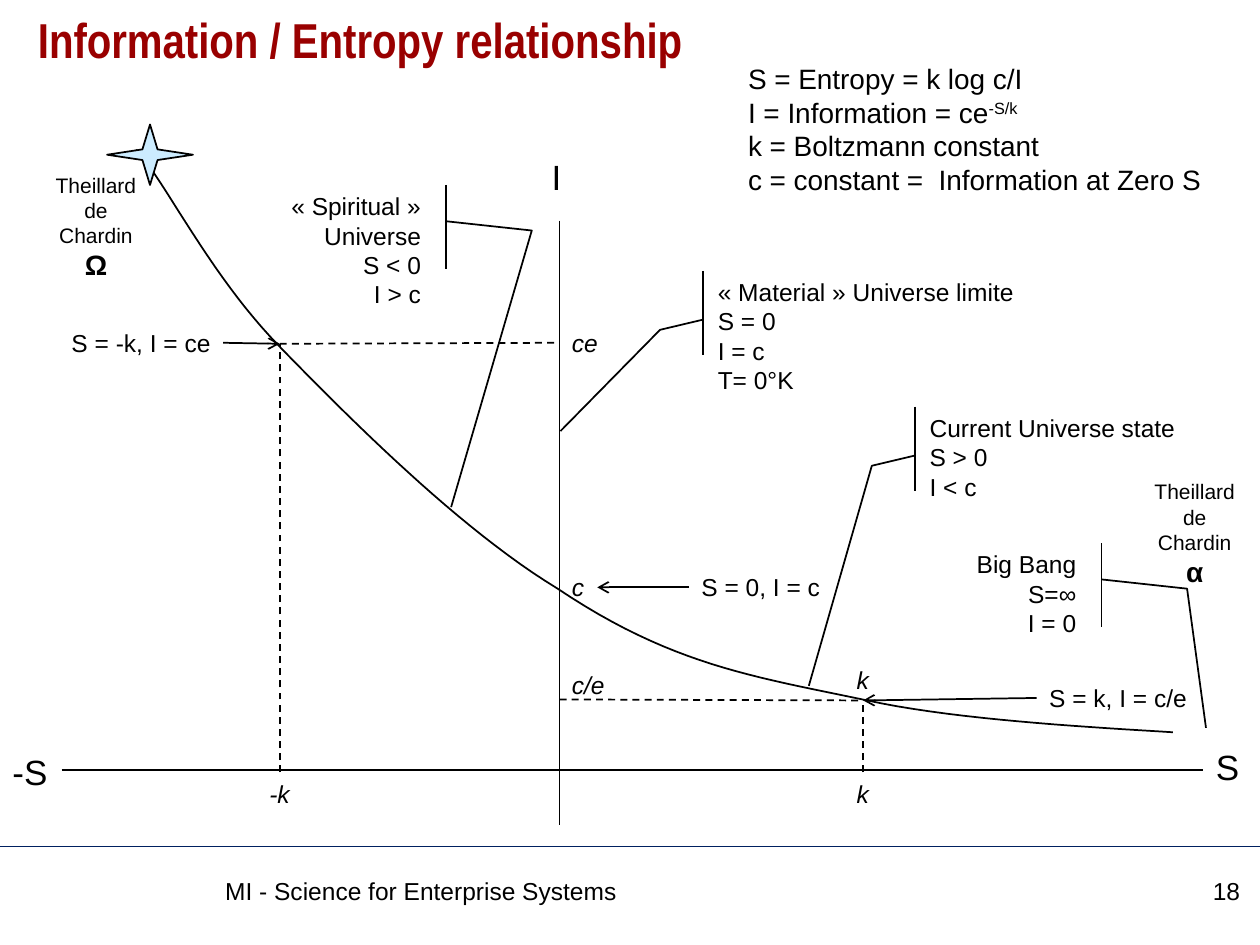
from lxml import etree
from pptx import Presentation
from pptx.dml.color import RGBColor
from pptx.enum.dml import MSO_LINE
from pptx.enum.shapes import MSO_CONNECTOR, MSO_SHAPE
from pptx.enum.text import MSO_ANCHOR, MSO_AUTO_SIZE, PP_ALIGN
from pptx.oxml.ns import qn
from pptx.util import Cm, Pt

STRAIGHT = MSO_CONNECTOR.STRAIGHT
DASH = MSO_LINE.DASH
CALLOUT = MSO_SHAPE.LINE_CALLOUT_2_ACCENT_BAR
STAR = MSO_SHAPE.STAR_4_POINT
RECTANGLE = MSO_SHAPE.RECTANGLE
TOP = MSO_ANCHOR.TOP
FIXED = MSO_AUTO_SIZE.NONE
LEFT, CENTER, RIGHT = PP_ALIGN.LEFT, PP_ALIGN.CENTER, PP_ALIGN.RIGHT

BLACK, WHITE, NAVY, RED, PALE_BLUE = "000000", "FFFFFF", "002060", "990000", "CCECFF"
CURVE_START = (2.74, 3.02)
CURVE_SEGMENTS = [
    ((3.28, 3.56), (4.19, 5.49), (5.61, 6.96)),
    ((7.04, 8.43), (9.27, 10.67), (11.23, 11.86)),
    ((13.54, 13.41), (15.19, 13.64), (17.48, 14.12)),
    ((19.79, 14.63), (23.72, 14.73), (25.02, 14.86)),
]
CURVE_END = (25.32, 14.86)
STEPS = 24
AXIS_X = 11.28
LEFT_BAR = (0.58, -0.02, 0.7, -0.36)
RIGHT_BAR = (0.43, 1.1, 0.54, 1.78)


def rgb(value):
    return RGBColor.from_string(value)


def apply(target, values):
    for name, value in values.items():
        setattr(target, name, value)


def write(frame, lines, size=14, align=LEFT, wrap=False, color=BLACK, **font_values):
    apply(frame, {"auto_size": FIXED, "word_wrap": wrap, "vertical_anchor": TOP})
    for index, line in enumerate(lines):
        paragraph = frame.paragraphs[0] if index == 0 else frame.add_paragraph()
        paragraph.alignment = align
        run = paragraph.add_run()
        run.text = line
        apply(run.font, {"name": "Arial", "size": Pt(size), **font_values})
        run.font.color.rgb = rgb(color)
    return frame


def add_label(slide, place, lines, **format_values):
    box = slide.shapes.add_textbox(*map(Cm, place))
    return write(box.text_frame, lines, **format_values)


def add_line(slide, start, end, color=BLACK, width=1, dash=None, arrow=False):
    line = slide.shapes.add_connector(STRAIGHT, *map(Cm, start + end))
    line.line.color.rgb = rgb(color)
    line.line.width = Pt(width)
    if dash:
        line.line.dash_style = dash
    if arrow:
        etree.SubElement(line.line._get_or_add_ln(), qn("a:tailEnd"), type="arrow")
    etree.SubElement(line._element.spPr, qn("a:effectLst"))


def outline(shape, color=BLACK):
    shape.shadow.inherit = False
    shape.line.color.rgb = rgb(color)
    shape.line.width = Pt(1)


def add_solid(slide, kind, place, fill, line=BLACK):
    shape = slide.shapes.add_shape(kind, *map(Cm, place))
    shape.fill.solid()
    shape.fill.fore_color.rgb = rgb(fill)
    outline(shape, line)
    return shape


def add_callout(slide, left, top, handles, lines, align=LEFT):
    callout = add_solid(slide, CALLOUT, (left, top, 2.54, 1.7), WHITE)
    for index, value in enumerate(handles):
        callout.adjustments[index] = value
    write(callout.text_frame, lines, align=align)


def bezier_points(start, first, second, end):
    for step in range(1, STEPS + 1):
        t = step / STEPS
        u = 1 - t
        yield tuple(
            Cm(u**3 * a + 3 * u * u * t * b + 3 * u * t * t * c + t**3 * d)
            for a, b, c, d in zip(start, first, second, end)
        )


def add_curve(slide):
    points = []
    start = CURVE_START
    for segment in CURVE_SEGMENTS:
        points.extend(bezier_points(start, *segment))
        start = segment[-1]
    points.append(tuple(map(Cm, CURVE_END)))
    builder = slide.shapes.build_freeform(*map(Cm, CURVE_START))
    builder.add_line_segments(points, close=False)
    curve = builder.convert_to_shape()
    curve.fill.background()
    outline(curve)


def add_title(slide):
    title = slide.shapes.title
    apply(title, {"left": Cm(0.51), "top": Cm(0.2), "width": Cm(24.41), "height": Cm(2.11)})
    write(title.text_frame, ["Information / Entropy relationship"], size=28, wrap=True,
          color=RED, name="Arial Narrow", bold=True)
    title.text_frame.paragraphs[0].line_spacing = 0.9


def add_formulas(slide):
    formulas = add_label(slide, (14.83, 1.12, 10.54, 3.68), [
        "S = Entropy = k log c/I",
        "I = Information = ce",
        "k = Boltzmann constant",
        "c = constant =  Information at Zero S",
    ], size=16, wrap=True)
    exponent = formulas.paragraphs[1].add_run()
    exponent.text = "-S/k"
    apply(exponent.font, {"name": "Arial", "size": Pt(16)})
    exponent.font.color.rgb = rgb(BLACK)
    exponent._r.get_or_add_rPr().set("baseline", "30000")


def add_thinker(slide, left, top, symbol):
    thinker = add_label(slide, (left, top, 2.39, 2.49),
                        ["Theillard", "de Chardin", symbol], size=12, align=CENTER, wrap=True)
    apply(thinker.paragraphs[-1].runs[0].font, {"size": Pt(16), "bold": True})


def main():
    deck = Presentation()
    apply(deck, {"slide_width": Cm(25.4), "slide_height": Cm(19.05)})
    slide = deck.slides.add_slide(deck.slide_layouts[5])

    add_line(slide, (0, 17.07), (25.4, 17.07), color=NAVY, width=0.75)
    add_title(slide)
    add_label(slide, (4.29, 17.53, 18.31, 1.14), ["MI - Science for Enterprise Systems"], wrap=True)
    add_label(slide, (22.91, 17.53, 2.34, 1.14), ["18"], align=RIGHT, wrap=True)

    add_line(slide, (AXIS_X, 4.45), (AXIS_X, 16.64))
    add_line(slide, (1.24, 15.52), (24.26, 15.52))
    add_curve(slide)
    for text, left, top, width in [
        ("S", 24.26, 14.91, 0.99), ("-S", 0, 15.01, 1.22), ("I", 10.87, 3.02, 0.71),
    ]:
        add_label(slide, (left, top, width, 1.12), [text], size=20)
    for text, left, top, width in [
        ("k", 17.02, 15.57, 0.76), ("-k", 5.18, 15.57, 0.91), ("ce", AXIS_X, 6.48, 1.04),
        ("c/e", AXIS_X, 13.39, 1.17), ("k", 17.02, 13.28, 0.76), ("c", AXIS_X, 11.4, 0.76),
    ]:
        add_label(slide, (left, top, width, 0.86), [text], italic=True)
    for start, end in [
        ((5.64, 15.57), (5.64, 6.93)), ((5.64, 6.93), (AXIS_X, 6.91)),
        ((17.4, 15.57), (17.4, 14.12)), ((AXIS_X, 14.1), (17.4, 14.12)),
    ]:
        add_line(slide, start, end, dash=DASH)

    add_formulas(slide)
    for text, left, top, width, align in [
        ("S = -k, I = ce", 0.64, 6.48, 3.86, RIGHT),
        ("S = 0, I = c", 13.89, 11.4, 2.92, LEFT),
        ("S = k, I = c/e", 20.9, 13.64, 3.3, LEFT),
    ]:
        add_label(slide, (left, top, width, 0.86), [text], align=align, wrap=align == RIGHT)
    for start, end in [
        ((13.89, 11.84), (12.04, 11.84)), ((4.5, 6.91), (5.64, 6.93)), ((20.9, 14.07), (17.4, 14.12)),
    ]:
        add_line(slide, start, end, arrow=True)

    curve_limit = add_solid(slide, RECTANGLE, (23.65, 14.4, 1.75, 0.61), WHITE)
    curve_limit.line.fill.background()
    add_callout(slide, 19.41, 10.95, RIGHT_BAR + (2.19, 1.93), ["Big Bang", "S=∞", "I = 0"], RIGHT)
    add_callout(slide, 18.49, 8.2, LEFT_BAR + (3.31, -0.86),
                ["Current Universe state", "S > 0", "I < c"])
    add_callout(slide, 14.22, 5.46, LEFT_BAR + (1.9, -1.15),
                ["« Material » Universe limite", "S = 0", "I = c", "T= 0°K"])
    add_callout(slide, 6.2, 3.73, RIGHT_BAR + (3.82, 1.14),
                ["« Spiritual »", "Universe", "S < 0", "I > c"], RIGHT)

    add_thinker(slide, 0.74, 3.35, "Ω")
    add_solid(slide, STAR, (2.16, 2.51, 1.73, 1.22), PALE_BLUE)
    add_thinker(slide, 22.89, 9.53, "α")
    deck.save("out.pptx")


if __name__ == "__main__":
    main()
